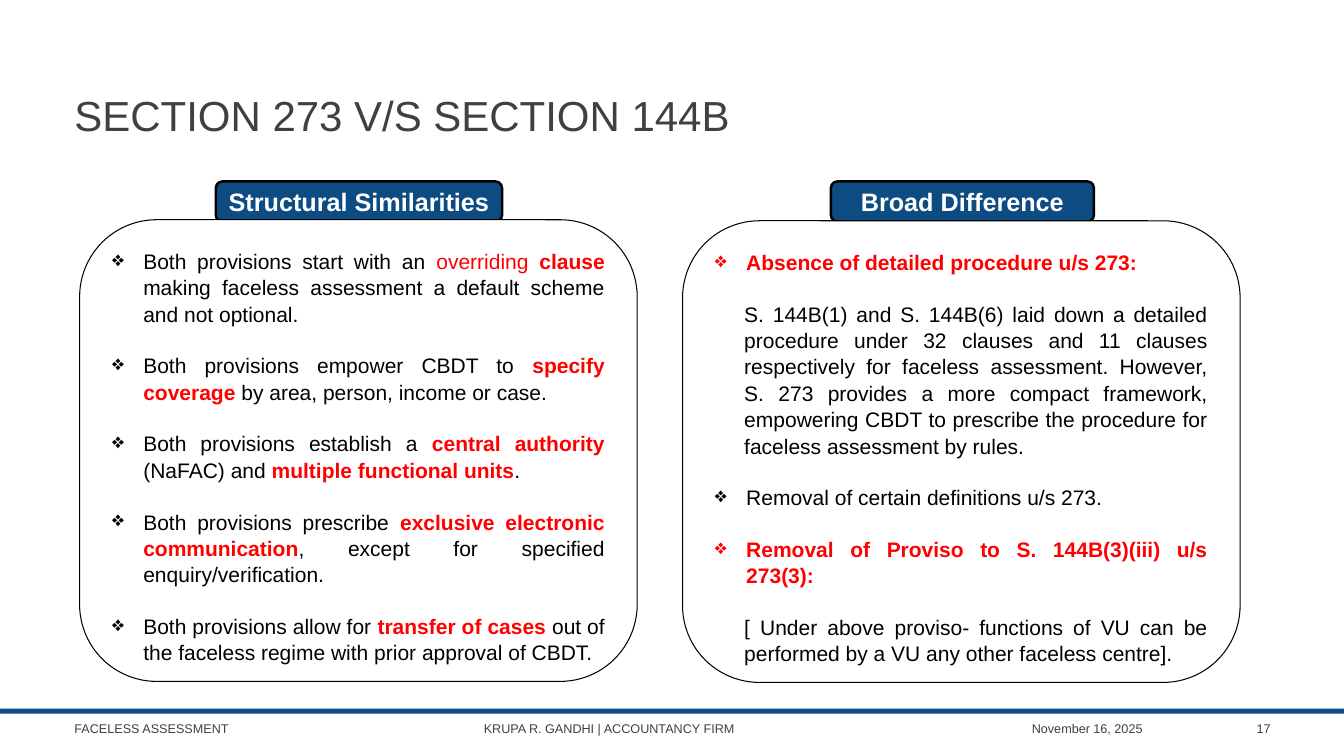
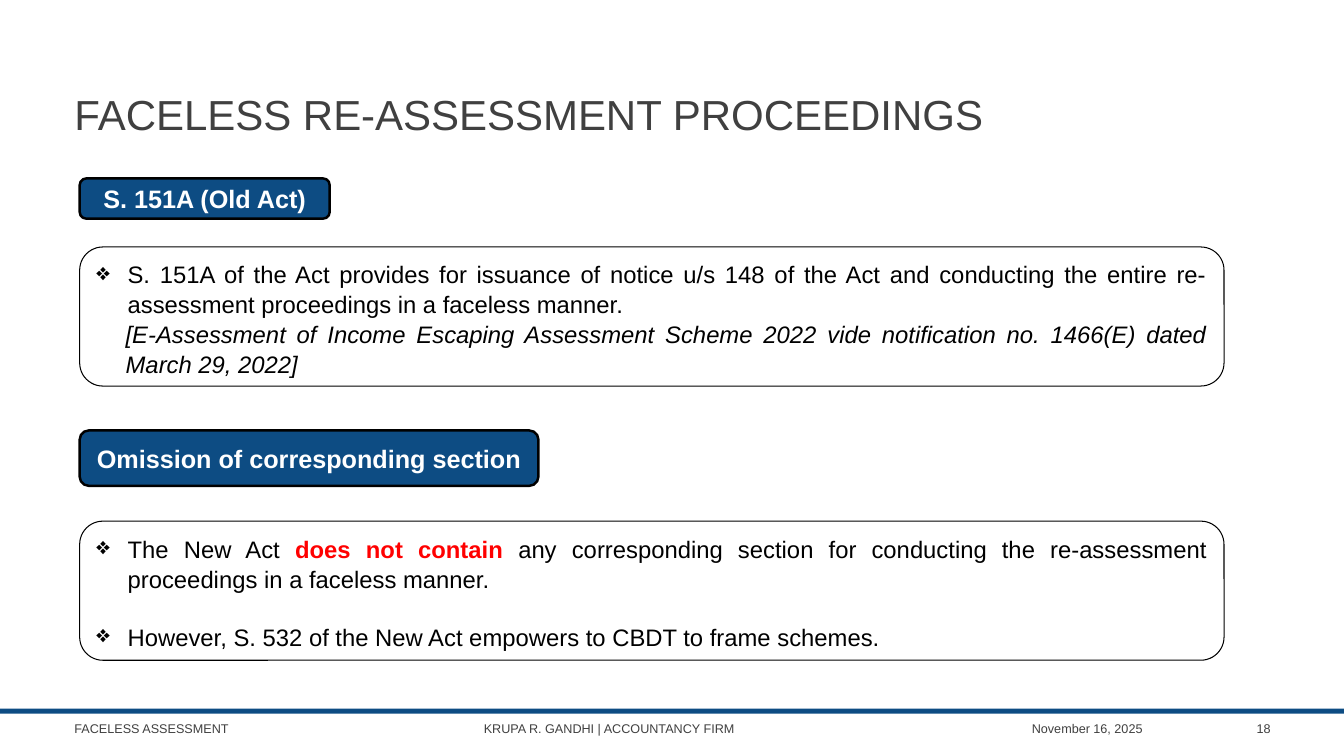
import pptx
import pptx.dml.color
import pptx.enum.shapes
import pptx.enum.text
import pptx.oxml.ns
import pptx.util
from lxml import etree

Inches = pptx.util.Inches
Pt = pptx.util.Pt
SHAPE = pptx.enum.shapes.MSO_SHAPE
ALIGN = pptx.enum.text.PP_ALIGN
ANCHOR = pptx.enum.text.MSO_ANCHOR

COLORS = {"navy": "0D4C83", "gray": "404040", "black": "000000",
          "white": "FFFFFF", "red": "FF0000"}
PLAIN = {}
RED = {"color": "red"}
HOT = {"color": "red", "bold": True}
ITALIC = {"italic": True}


class Deck:
    """Hold the deck style and the current slide, and draw its elements."""

    font = "Arial"
    first_number = 17
    footers = [
        (0.64, 3.5, ALIGN.LEFT, "FACELESS ASSESSMENT"),
        (4.7, 3.5, ALIGN.LEFT, "KRUPA R. GANDHI | ACCOUNTANCY FIRM"),
        (8.32, 3.11, ALIGN.RIGHT, "November 16, 2025"),
    ]

    def __init__(self):
        self.prs = pptx.Presentation()
        self.prs.slide_width = Inches(13.33)
        self.prs.slide_height = Inches(7.5)
        self.s = None

    def color(self, name):
        return pptx.dml.color.RGBColor.from_string(COLORS[name])

    def run(self, p, text, size, color="black", **styles):
        r = p.add_run()
        r.text = text
        for name, value in {"name": self.font, "size": Pt(size), **styles}.items():
            setattr(r.font, name, value)
        r.font.color.rgb = self.color(color)

    def shape(self, kind, at, fill, line=None):
        sp = self.s.shapes.add_shape(kind, *map(Inches, at))
        sp.shadow.inherit = False
        sp.fill.solid()
        sp.fill.fore_color.rgb = self.color(fill)
        if line:
            sp.line.color.rgb = self.color("black")
            sp.line.width = Pt(line)
        else:
            sp.line.fill.background()
        return sp

    def text(self, at, text, size, align=ALIGN.LEFT):
        tf = self.s.shapes.add_textbox(*map(Inches, at)).text_frame
        tf.word_wrap = True
        tf.vertical_anchor = ANCHOR.MIDDLE
        p = tf.paragraphs[0]
        p.alignment = align
        self.run(p, text, size, "gray")

    def slide(self, title, top):
        self.s = self.prs.slides.add_slide(self.prs.slide_layouts[6])
        self.shape(SHAPE.RECTANGLE, (0, 7.03, 13.33, 0.05), "navy")
        number = str(self.first_number + len(self.prs.slides) - 1)
        for left, width, align, text in self.footers + [(11.55, 1.15, ALIGN.RIGHT, number)]:
            self.text((left, 7.03, width, 0.4), text, 9, align)
        self.text((0.64, top, 12.06, 1.08), title, 30)

    def header(self, at, text):
        tf = self.shape(SHAPE.ROUNDED_RECTANGLE, at, "navy", 1.75).text_frame
        tf.word_wrap = False
        tf.vertical_anchor = ANCHOR.MIDDLE
        p = tf.paragraphs[0]
        p.alignment = ALIGN.CENTER
        self.run(p, text, 18, "white", bold=True)

    def indent(self, p, bullet):
        pPr = p._p.get_or_add_pPr()
        pPr.set("marL", str(Inches(0.31 if bullet else 0.29)))
        pPr.set("indent", str(Inches(-0.31 if bullet else 0)))
        if bullet:
            bu = etree.SubElement(pPr, pptx.oxml.ns.qn("a:buChar"))
            bu.set("char", "❖")

    def panel(self, at, size, items):
        tf = self.shape(SHAPE.ROUNDED_RECTANGLE, at, "white", 0.75).text_frame
        tf.word_wrap = True
        tf.vertical_anchor = ANCHOR.TOP
        for i, (bullet, gap, runs) in enumerate(items):
            p = tf.add_paragraph() if i else tf.paragraphs[0]
            self.indent(p, bullet)
            p.alignment = ALIGN.JUSTIFY
            p.line_spacing = 1.05
            if i and gap:
                p.space_before = Pt(1.2 * size)
            for text, style in runs:
                self.run(p, text, size, **style)


def bullet(*runs):
    return True, True, runs


def note(text, style=PLAIN, gap=True):
    return False, gap, [(text, style)]


def main():
    deck = Deck()

    deck.slide("SECTION 273 V/S SECTION 144B", 0.6)
    deck.header((2.14, 1.8, 2.84, 0.4), "Structural Similarities")
    deck.panel((0.79, 2.18, 5.53, 4.58), 15, [
        bullet(("Both provisions start with an ", PLAIN), ("overriding ", RED),
               ("clause ", HOT),
               ("making faceless assessment a default scheme and not optional.", PLAIN)),
        bullet(("Both provisions empower CBDT to ", PLAIN), ("specify coverage ", HOT),
               ("by area, person, income or case.", PLAIN)),
        bullet(("Both provisions establish a ", PLAIN), ("central authority ", HOT),
               ("(NaFAC) and ", PLAIN), ("multiple functional units", HOT), (".", PLAIN)),
        bullet(("Both provisions prescribe ", PLAIN),
               ("exclusive electronic communication", HOT),
               (", except for specified enquiry/verification.", PLAIN)),
        bullet(("Both provisions allow for ", PLAIN), ("transfer of cases ", HOT),
               ("out of the faceless regime with prior approval of CBDT.", PLAIN)),
    ])
    deck.header((8.24, 1.8, 2.61, 0.4), "Broad Difference")
    deck.panel((6.77, 2.19, 5.53, 4.58), 15, [
        bullet(("Absence of detailed procedure u/s 273:", HOT)),
        note("S. 144B(1) and S. 144B(6) laid down a detailed procedure under 32 clauses "
             "and 11 clauses respectively for faceless assessment. However, S. 273 "
             "provides a more compact framework, empowering CBDT to prescribe the "
             "procedure for faceless assessment by rules."),
        bullet(("Removal of certain definitions u/s 273.", PLAIN)),
        bullet(("Removal of Proviso to S. 144B(3)(iii) u/s 273(3):", HOT)),
        note("[ Under above proviso- functions of VU can be performed by a VU any other "
             "faceless centre]."),
    ])

    deck.slide("FACELESS RE-ASSESSMENT PROCEEDINGS", 0.59)
    deck.header((0.79, 1.77, 2.48, 0.4), "S. 151A (Old Act)")
    deck.panel((0.79, 2.45, 11.35, 1.38), 17, [
        bullet(("S. 151A of the Act provides for issuance of notice u/s 148 of the Act and "
                "conducting the entire re-assessment proceedings in a faceless manner.",
                PLAIN)),
        note("[E-Assessment of Income Escaping Assessment Scheme 2022 vide notification "
             "no. 1466(E) dated March 29, 2022]", ITALIC, gap=False),
    ])
    deck.header((0.79, 4.27, 4.55, 0.55), "Omission of corresponding section")
    deck.panel((0.79, 5.17, 11.35, 1.38), 17, [
        bullet(("The New Act ", PLAIN), ("does not contain ", HOT),
               ("any corresponding section for conducting the re-assessment proceedings "
                "in a faceless manner.", PLAIN)),
        bullet(("However, S. 532 of the New Act empowers to CBDT to frame schemes.", PLAIN)),
    ])

    deck.prs.save("out.pptx")


if __name__ == "__main__":
    main()
